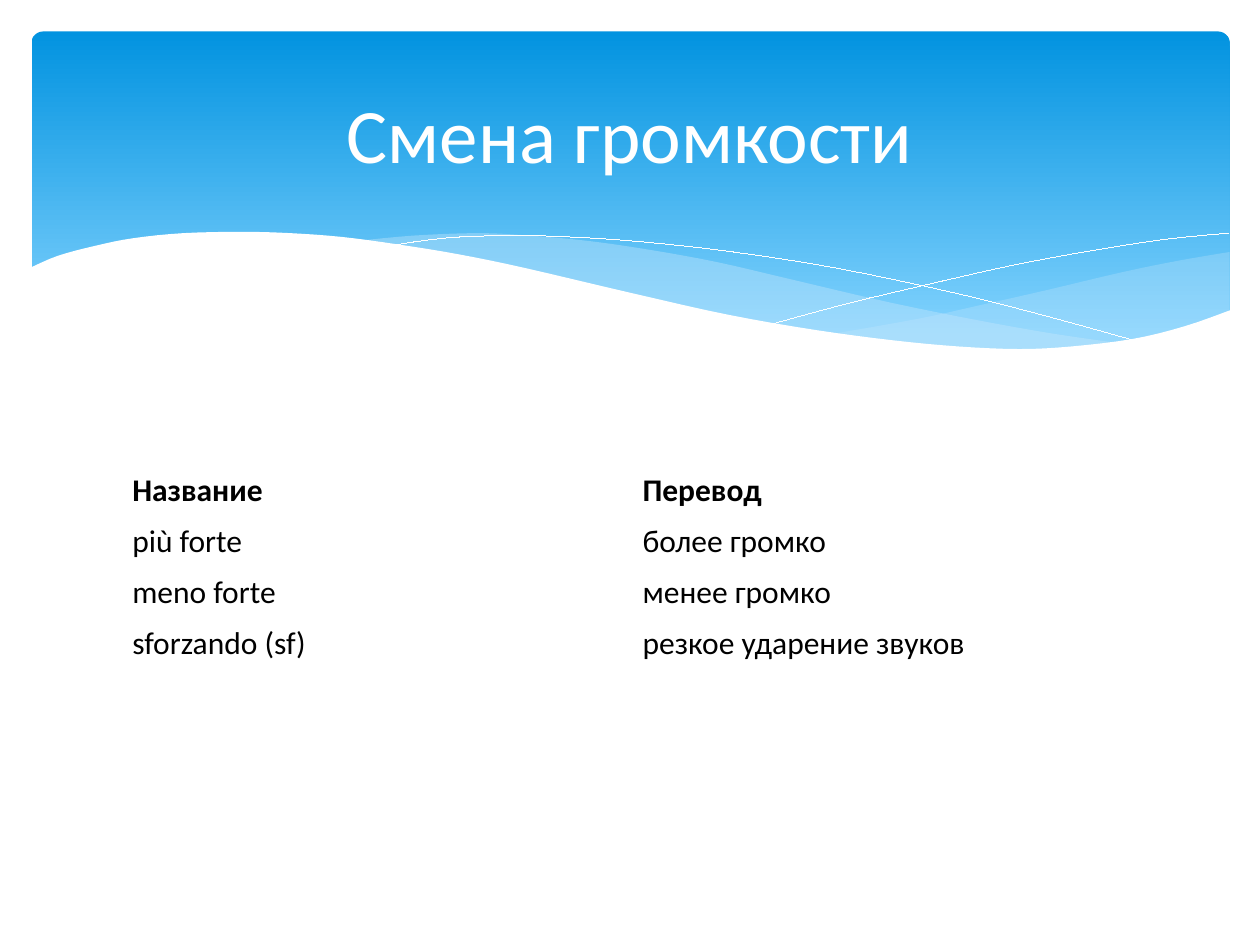
"""Build a slide on changes of loudness: a wave banner, a title and a two-column glossary."""
from dataclasses import dataclass
from itertools import product
from typing import NamedTuple, Optional

from lxml.etree import SubElement
from pptx import Presentation
from pptx.dml.color import RGBColor as RGB
from pptx.enum.shapes import MSO_SHAPE as Shape
from pptx.enum.text import MSO_ANCHOR as Anchor, PP_ALIGN as Align
from pptx.oxml.ns import qn
from pptx.util import Inches, Pt


@dataclass(frozen=True)
class Theme:
    font: str = "Calibri"
    title_size: int = 44
    body_size: int = 18
    hairline: float = 0.01
    white: str = "FFFFFF"
    ink: str = "000000"
    sky_top: str = "0293E0"
    sky_bottom: str = "83D3FE"
    mist: str = "C6E7FC"


class Box(NamedTuple):
    col: float
    row: float
    cols: float
    rows: float

    def emu(self) -> list[int]:
        return [Inches(v * CELL) for v in self]


Points = list[tuple[float, float]]


@dataclass(frozen=True)
class Wave:
    curves: tuple[Points, ...]
    fill: Optional[str] = None
    opacity: int = 100


THEME = Theme()
CELL = 0.25
COLS, ROWS = 40, 30
BANNER = Box(1, 1, 38.04, 10.8)
TITLE = Box(2, 1.48, 36, 5.48)
TABLE = Box(3.8, 14.76, 32.4, 6.5)

WAVES = [
    Wave((
        [(9.76, 2), (9.35, 2.07), (8.91, 2.16), (8.32, 2.3), (7.79, 2.42), (7.29, 2.53), (6.61, 2.65)],
        [(6.61, 2.65), (7.05, 2.71), (7.57, 2.76), (8.03, 2.78), (8.44, 2.77), (8.81, 2.73),
         (9.21, 2.65), (9.49, 2.57), (9.76, 2.47)],
    ), THEME.mist, 29),
    Wave((
        [(8.93, 2.73), (8.37, 2.65), (7.75, 2.54), (7.06, 2.4), (6.29, 2.22), (5.69, 2.08),
         (5.14, 1.98), (4.65, 1.91), (4.2, 1.87), (3.8, 1.85), (3.28, 1.87), (2.86, 1.91)],
        [(2.86, 1.91), (3.42, 1.99), (4.04, 2.11), (4.91, 2.32), (5.66, 2.48), (6.34, 2.61),
         (6.95, 2.7), (7.48, 2.76), (7.96, 2.78), (8.48, 2.77), (8.93, 2.73)],
    ), THEME.mist, 40),
    Wave((
        [(3.09, 1.95), (3.53, 1.89), (4.01, 1.87), (4.5, 1.88), (5.1, 1.92), (5.82, 2),
         (6.65, 2.13), (7.6, 2.33), (8.31, 2.51), (9.07, 2.72)],
    )),
    Wave((
        [(6.13, 2.57), (6.72, 2.41), (7.48, 2.23), (8.06, 2.1), (8.66, 1.99), (9.24, 1.9), (9.75, 1.85)],
    )),
    Wave((
        [(9.77, 2.46), (9.4, 2.59), (8.99, 2.69), (8.5, 2.75), (8.09, 2.77), (7.61, 2.75),
         (7.08, 2.7), (6.48, 2.62), (5.79, 2.5), (5.03, 2.33), (4.18, 2.13), (3.65, 2.02),
         (3.16, 1.94), (2.71, 1.88), (2.3, 1.85), (1.93, 1.84), (1.46, 1.85), (1.06, 1.89),
         (0.76, 1.95), (0.46, 2.03), (0.23, 2.13)],
        [(0.23, 3.29), (9.77, 3.29)],
    ), THEME.white),
]

GLOSSARY = [
    ("Название", "Перевод"),
    ("più forte", "более громко"),
    ("meno forte", "менее громко"),
    ("sforzando (sf)", "резкое ударение звуков"),
]


def style_font(font, size: int, color: str, bold: bool = False) -> None:
    font.name, font.size, font.bold = THEME.font, Pt(size), bold
    font.color.rgb = RGB.from_string(color)


def smooth(knots: Points, steps: int = 4) -> Points:
    padded = [knots[0], *knots, knots[-1]]
    points = [knots[0]]
    for a, b, c, d in zip(padded, padded[1:], padded[2:], padded[3:]):
        for t in (i / steps for i in range(1, steps + 1)):
            points.append(tuple(
                q + t / 2 * (r - p + t * (2 * p - 5 * q + 4 * r - s + t * (3 * (q - r) + s - p)))
                for p, q, r, s in zip(a, b, c, d)))
    return points


def draw_banner(shapes, box: Box) -> None:
    sp = shapes.add_shape(Shape.ROUNDED_RECTANGLE, *box.emu())
    sp.adjustments[0] = 0.034
    sp.shadow.inherit = False
    sp.line.fill.background()
    sp.fill.gradient()
    sp.fill.gradient_angle = 270
    stops = zip(sp.fill.gradient_stops, (0, 0.9), (THEME.sky_top, THEME.sky_bottom))
    for stop, position, color in stops:
        stop.position = position
        stop.color.rgb = RGB.from_string(color)


def draw_wave(shapes, wave: Wave) -> None:
    start, *rest = [(Inches(x), Inches(y)) for curve in wave.curves for x, y in smooth(curve)]
    builder = shapes.build_freeform(*start)
    builder.add_line_segments(rest, close=wave.fill is not None)
    sp = builder.convert_to_shape()
    sp.shadow.inherit = False
    if wave.fill is None:
        sp.fill.background()
        sp.line.color.rgb = RGB.from_string(THEME.white)
        sp.line.width = Pt(THEME.hairline)
        return
    sp.line.fill.background()
    sp.fill.solid()
    sp.fill.fore_color.rgb = RGB.from_string(wave.fill)
    if wave.opacity < 100:
        color = sp._element.spPr.find(qn("a:solidFill")).find(qn("a:srgbClr"))
        SubElement(color, qn("a:alpha"), val=str(wave.opacity * 1000))


def draw_title(s, box: Box, text: str) -> None:
    sp = s.shapes.title
    sp.left, sp.top, sp.width, sp.height = box.emu()
    tf = sp.text_frame
    tf.text = text
    tf.vertical_anchor = Anchor.MIDDLE
    p = tf.paragraphs[0]
    p.alignment = Align.CENTER
    style_font(p.font, THEME.title_size, THEME.white)
    s.shapes._spTree.append(sp._element)


def draw_table(shapes, box: Box, rows: list[tuple[str, str]]) -> None:
    table = shapes.add_table(len(rows), len(rows[0]), *box.emu()).table
    table.first_row = table.horz_banding = False
    for i, j in product(range(len(rows)), range(len(rows[0]))):
        cell = table.cell(i, j)
        cell.text = rows[i][j]
        cell.vertical_anchor = Anchor.MIDDLE
        cell.fill.background()
        style_font(cell.text_frame.paragraphs[0].font, THEME.body_size, THEME.ink, bold=i == 0)


def main() -> None:
    prs = Presentation()
    prs.slide_width, prs.slide_height = Inches(COLS * CELL), Inches(ROWS * CELL)
    s = prs.slides.add_slide(prs.slide_layouts[5])
    draw_banner(s.shapes, BANNER)
    group = s.shapes.add_group_shape()
    for wave in WAVES:
        draw_wave(group.shapes, wave)
    draw_table(s.shapes, TABLE, GLOSSARY)
    draw_title(s, TITLE, "Смена громкости")
    prs.save("out.pptx")


if __name__ == "__main__":
    main()
